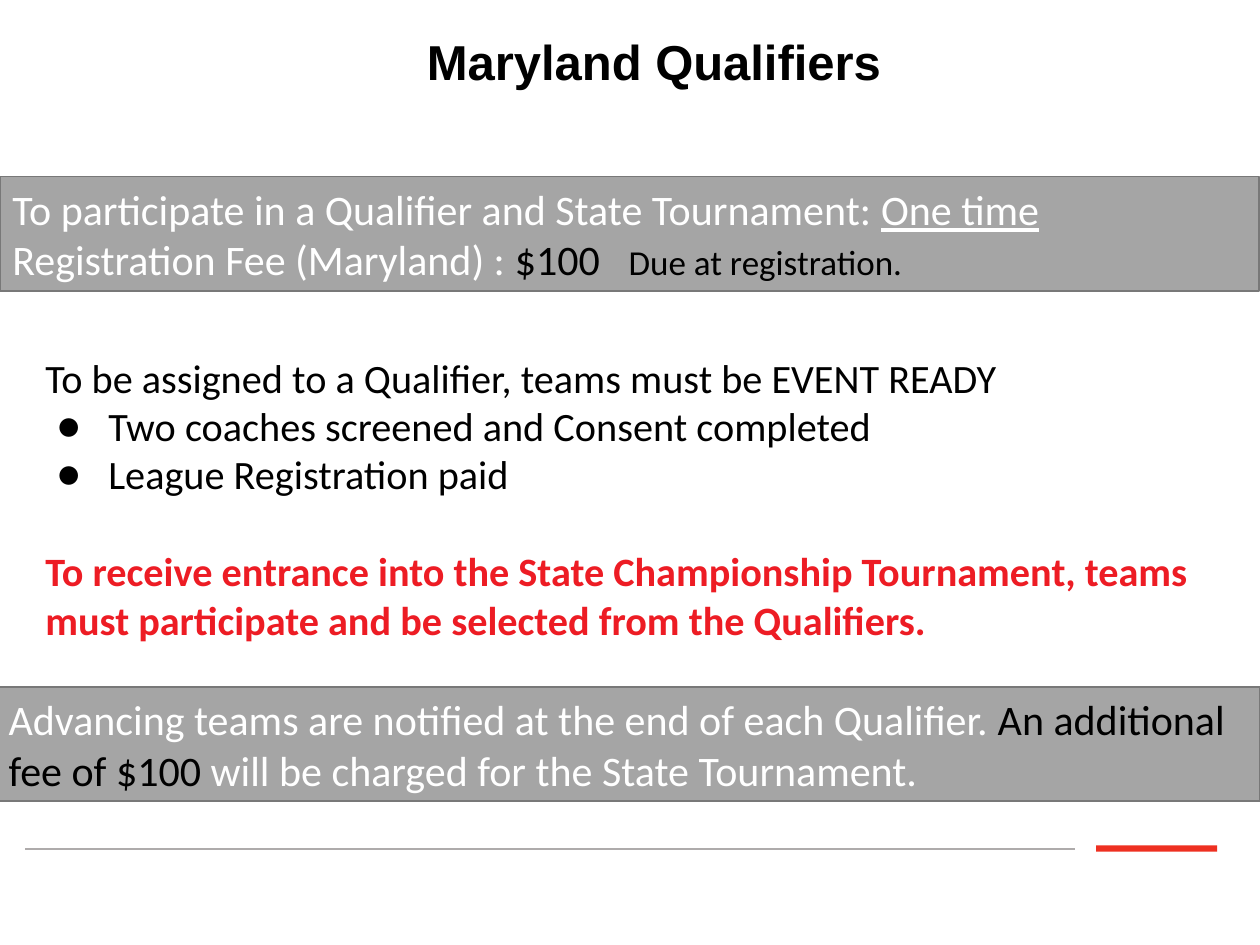
import pptx
import pptx.dml.color
import pptx.enum.shapes
import pptx.enum.text
import pptx.oxml.ns
import pptx.util
from lxml import etree

WIDTH, HEIGHT = 10, 7.5
COLORS = {
    "black": "000000",
    "white": "FFFFFF",
    "band": "A5A5A5",
    "band_edge": "787878",
    "rule": "AEABAB",
    "accent": "EE3021",
    "warning": "ED1C24",
}


def inches(*lengths):
    return [pptx.util.Inches(length) for length in lengths]


def rgb(name):
    return pptx.dml.color.RGBColor.from_string(COLORS[name])


def add_element(parent, tag, **attributes):
    return etree.SubElement(parent, pptx.oxml.ns.qn(tag), attributes)


def place(shape, left, top, width, height):
    shape.left, shape.top, shape.width, shape.height = inches(left, top, width, height)


def format_font(font, size, color, name="Calibri", bold=False, underline=False):
    font.name, font.size = name, pptx.util.Pt(size)
    font.bold, font.underline = bold, underline
    font.color.rgb = rgb(color)


def set_title(slide, text):
    title = slide.shapes.title
    place(title, 1.75, 0.2, 6.88, 0.57)
    title.text_frame.text = text
    title.text_frame.vertical_anchor = pptx.enum.text.MSO_ANCHOR.TOP
    paragraph = title.text_frame.paragraphs[0]
    paragraph.alignment = pptx.enum.text.PP_ALIGN.CENTER
    format_font(paragraph.runs[0].font, 28, "black", "Arial", bold=True)


def set_bullet(paragraph, character):
    """Give the paragraph a hanging bullet, or none when character is empty."""
    properties = paragraph._p.get_or_add_pPr()
    indents = inches(0.5, -0.41) if character else (0, 0)
    for key, length in zip(("marL", "indent"), indents):
        properties.set(key, str(length))
    if character:
        color = add_element(properties, "a:buClr")
        add_element(color, "a:srgbClr", val=COLORS["black"])
        add_element(properties, "a:buFont", typeface="Calibri")
        add_element(properties, "a:buChar", char=character)
    else:
        add_element(properties, "a:buNone")


def set_body(slide, items):
    """Fill the body with (text, bullet, color, bold, space before) items."""
    body = slide.placeholders[1]
    place(body, 0.26, 2.75, 9.53, 2.63)
    frame = body.text_frame
    frame.text = "\n".join(item[0] for item in items)
    for paragraph, (_, bullet, color, bold, space) in zip(frame.paragraphs, items):
        set_bullet(paragraph, bullet)
        paragraph.space_before = pptx.util.Pt(space)
        format_font(paragraph.runs[0].font, 23, color, bold=bold)


def add_box(slide, left, top, width, height, fill):
    box = slide.shapes.add_shape(
        pptx.enum.shapes.MSO_SHAPE.RECTANGLE, *inches(left, top, width, height))
    box.shadow.inherit = False
    box.fill.solid()
    box.fill.fore_color.rgb = rgb(fill)
    box.line.fill.background()
    return box


def add_band(slide, left, top, width, runs, tab=None):
    """Draw a grey band whose text is a list of (text, color, size, underline)."""
    band = add_box(slide, left, top, width, 0.91, "band")
    band.line.color.rgb = rgb("band_edge")
    band.line.width = pptx.util.Pt(1)
    frame = band.text_frame
    frame.word_wrap = True
    paragraph = frame.paragraphs[0]
    paragraph.alignment = pptx.enum.text.PP_ALIGN.LEFT
    if tab:
        stops = add_element(paragraph._p.get_or_add_pPr(), "a:tabLst")
        add_element(stops, "a:tab", pos=str(pptx.util.Inches(tab)), algn="l")
    for text, color, size, underline in runs:
        run = paragraph.add_run()
        run.text = text
        format_font(run.font, size, color, underline=underline)


def add_rule(slide, left, right, top):
    rule = slide.shapes.add_connector(
        pptx.enum.shapes.MSO_CONNECTOR.STRAIGHT, *inches(left, top, right, top))
    rule.line.color.rgb = rgb("rule")
    rule.line.width = pptx.util.Pt(1)
    add_element(rule._element.spPr, "a:effectLst")


def main():
    presentation = pptx.Presentation()
    presentation.slide_width, presentation.slide_height = inches(WIDTH, HEIGHT)
    slide = presentation.slides.add_slide(presentation.slide_layouts[1])

    # Footer rule and accent
    add_box(slide, 8.7, 6.71, 0.96, 0.05, "accent")
    add_rule(slide, 0.2, 8.53, 6.74)

    # Title and requirements
    set_title(slide, "Maryland Qualifiers")
    set_body(slide, [
        ("To be assigned to a Qualifier, teams must be EVENT READY", "", "black", False, 0),
        ("Two coaches screened and Consent completed", "●", "black", False, 0),
        ("League Registration paid", "●", "black", False, 0),
        ("To receive entrance into the State Championship Tournament, teams must "
         "participate and be selected from the Qualifiers.", "", "warning", True, 28),
    ])

    # Fee bands
    add_band(slide, 0, 1.4, 9.99, [
        ("To participate in a Qualifier and State Tournament: ", "white", 24, False),
        ("One time ", "white", 24, True),
        ("Registration Fee (Maryland) : ", "white", 24, False),
        ("$100\t", "black", 24, False),
        ("Due at registration.", "black", 20, False),
    ], tab=4.89)
    add_band(slide, -0.03, 5.45, 10.03, [
        ("Advancing teams are notified at the end of each Qualifier. ", "white", 24, False),
        ("An additional fee of $100", "black", 24, False),
        (" will be charged for the State Tournament.", "white", 24, False),
    ])

    presentation.save("out.pptx")


if __name__ == "__main__":
    main()
